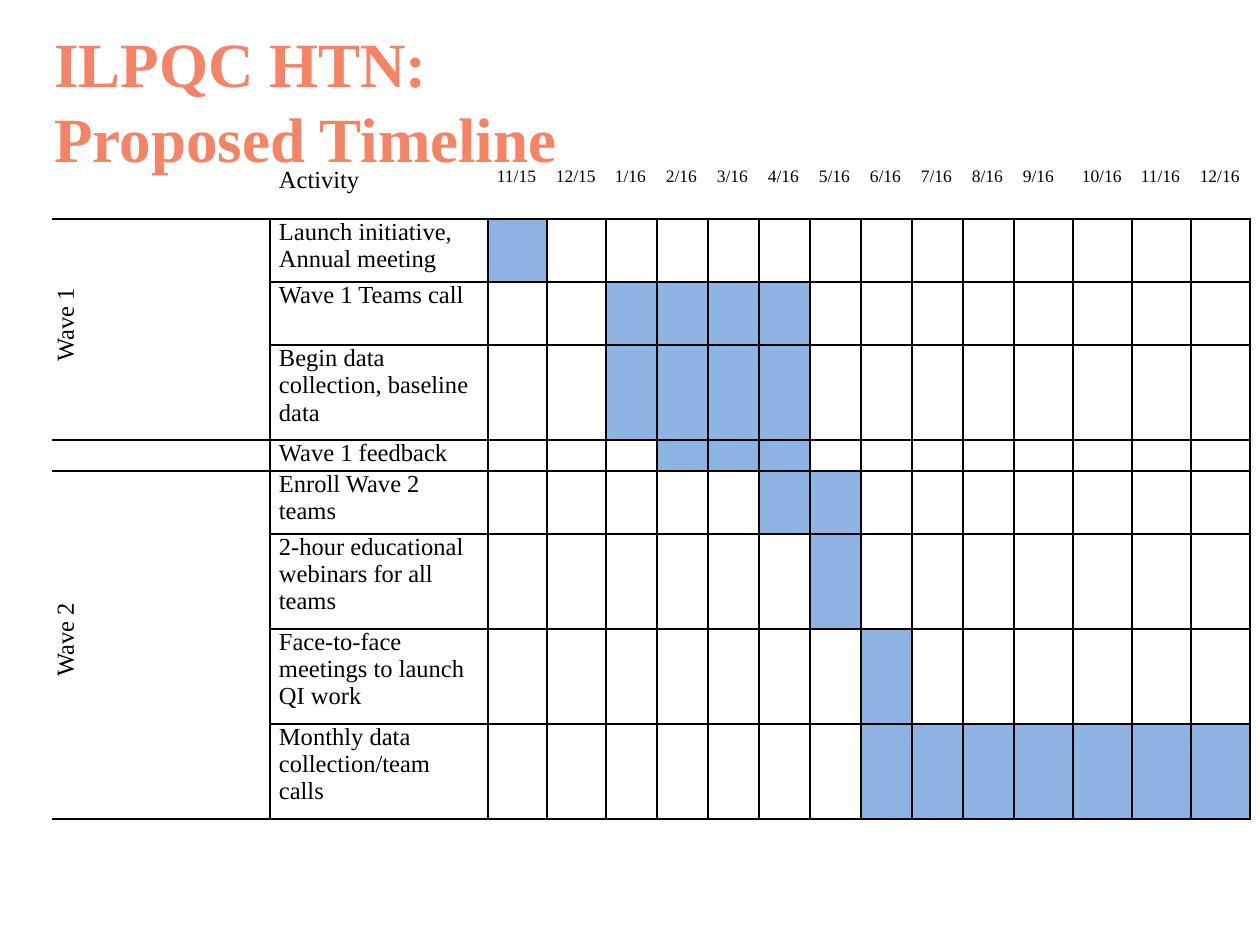
"""Build the ILPQC HTN proposed timeline slide."""
from dataclasses import dataclass

from lxml import etree
from pptx import Presentation
from pptx.dml.color import RGBColor
from pptx.enum.text import MSO_ANCHOR, PP_ALIGN
from pptx.oxml.ns import qn
from pptx.util import Pt

MIDDLE, TOP = MSO_ANCHOR.MIDDLE, MSO_ANCHOR.TOP
CENTER = PP_ALIGN.CENTER
EMU_PER_PX = 914400 / 126
BLUE, SKY = "8DB3E2", "8EB4E3"

MONTHS = ["11/15", "12/15", "1/16", "2/16", "3/16", "4/16", "5/16",
          "6/16", "7/16", "8/16", "9/16", "10/16", "11/16", "12/16"]
ACTIVITIES = [
    ("Launch initiative, Annual meeting", 63, 0, 0, BLUE),
    ("Wave 1 Teams call", 63, 2, 5, SKY),
    ("Begin data collection, baseline data", 95, 2, 5, SKY),
    ("Wave 1 feedback", 31, 3, 5, BLUE),
    ("Enroll Wave 2 teams", 63, 5, 6, SKY),
    ("2-hour educational webinars for all teams", 95, 6, 6, BLUE),
    ("Face-to-face meetings to launch QI work", 95, 7, 7, BLUE),
    ("Monthly data collection/team calls", 95, 7, 13, BLUE),
]
WAVES = [("Wave 1", 1, 3), ("Wave 2", 5, 8)]
HEADER_HEIGHT = 52
LABEL_WIDTH = 218
MONTH_WIDTHS = [59] * 2 + [51] * 8 + [59] * 4


def px(length):
    return round(length * EMU_PER_PX)


def color(hex_string):
    return RGBColor.from_string(hex_string)


def write(paragraph, text, font="Times New Roman", size=14, ink="000000", bold=False):
    for index, line in enumerate(text.split("\n")):
        if index:
            paragraph.add_line_break()
        run = paragraph.add_run()
        run.text = line
        run.font.name = font
        run.font.size = Pt(size)
        run.font.bold = bold
        run.font.color.rgb = color(ink)


@dataclass
class TimelineSlide:
    slide: object
    accent: str = "F58466"
    rule: str = "000000"
    margin: int = 9

    def title(self, text, left, top, width, height):
        frame = self.slide.shapes.add_textbox(px(left), px(top), px(width), px(height)).text_frame
        frame.word_wrap = True
        frame.vertical_anchor = MIDDLE
        write(frame.paragraphs[0], text, size=36, ink=self.accent, bold=True)

    def table(self, left, top, widths, heights):
        grid = self.slide.shapes.add_table(
            len(heights), len(widths), px(left), px(top),
            px(sum(widths)), px(sum(heights))).table
        grid.first_row = grid.horz_banding = False
        for column, width in zip(grid.columns, widths):
            column.width = px(width)
        for row, height in zip(grid.rows, heights):
            row.height = px(height)
        return grid

    def borders(self, cell, sides):
        properties = cell._tc.get_or_add_tcPr()
        for side in "LRTB":
            line = etree.SubElement(properties, qn(f"a:ln{side}"), w=str(Pt(1)))
            if side in sides:
                paint = etree.SubElement(line, qn("a:solidFill"))
                etree.SubElement(paint, qn("a:srgbClr"), val=self.rule)
            else:
                etree.SubElement(line, qn("a:noFill"))

    def cell(self, cell, text="", sides="LRTB", fill=None, size=14):
        self.borders(cell, sides)
        if fill:
            cell.fill.solid()
            cell.fill.fore_color.rgb = color(fill)
        else:
            cell.fill.background()
        cell.margin_left = cell.margin_right = px(self.margin)
        cell.margin_top = cell.margin_bottom = 0
        cell.vertical_anchor = TOP
        paragraph = cell.text_frame.paragraphs[0]
        if text:
            write(paragraph, text, size=size)
        else:
            etree.SubElement(paragraph._p, qn("a:endParaRPr"), sz="1000")

    def wave(self, first, last, text):
        first.merge(last)
        first._tc.get_or_add_tcPr().set("vert", "vert270")
        first.vertical_anchor = MIDDLE
        paragraph = first.text_frame.paragraphs[0]
        paragraph.alignment = CENTER
        paragraph._p.get_or_add_pPr().set("marL", str(px(10)))
        write(paragraph, text)


def main():
    deck = Presentation()
    deck.slide_width, deck.slide_height = px(1260), px(945)
    timeline = TimelineSlide(deck.slides.add_slide(deck.slide_layouts[6]))
    timeline.title("ILPQC HTN:\nProposed Timeline", 42, 32, 850, 136)

    heights = [HEADER_HEIGHT] + [activity[1] for activity in ACTIVITIES]
    grid = timeline.table(52, 167, [LABEL_WIDTH] * 2 + MONTH_WIDTHS, heights)
    timeline.cell(grid.cell(0, 0), sides="B")
    timeline.cell(grid.cell(0, 1), "Activity", sides="B")
    for column, month in enumerate(MONTHS, 2):
        timeline.cell(grid.cell(0, column), month, sides="B", size=10)
    for row, (activity, _, start, end, fill) in enumerate(ACTIVITIES, 1):
        timeline.cell(grid.cell(row, 0), sides="RTB")
        timeline.cell(grid.cell(row, 1), activity)
        for month in range(len(MONTHS)):
            active = start <= month <= end
            timeline.cell(grid.cell(row, month + 2), fill=fill if active else None)
    for wave, first, last in WAVES:
        timeline.wave(grid.cell(first, 0), grid.cell(last, 0), wave)
    deck.save("out.pptx")


if __name__ == "__main__":
    main()
